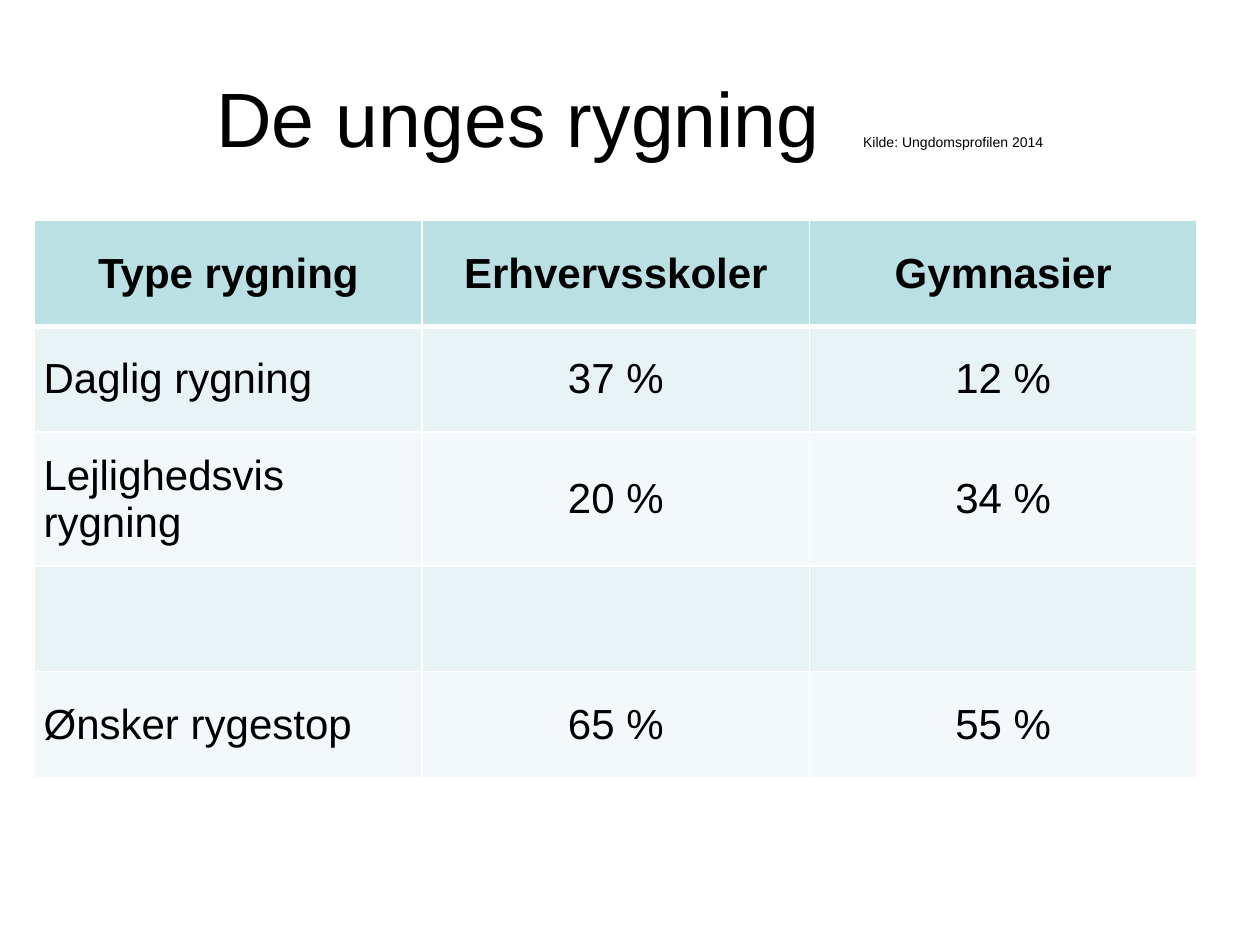
from lxml import etree
from pptx import Presentation
from pptx.dml.color import RGBColor
from pptx.enum.text import MSO_ANCHOR, PP_ALIGN
from pptx.oxml.ns import qn
from pptx.util import Cm, Pt

LEFT, MID = PP_ALIGN.LEFT, PP_ALIGN.CENTER
CENTRE = MSO_ANCHOR.MIDDLE


def tint(code):
    return RGBColor.from_string(code)


def write(para, text, size=24, bold=False, align=MID, color="000000"):
    para.alignment = align
    run = para.add_run()
    run.text = text
    font = run.font
    font.name = "Arial"
    font.size = Pt(size)
    font.bold = bold
    font.color.rgb = tint(color)


deck = Presentation()
deck.slide_width, deck.slide_height = Cm(25.4), Cm(19.05)
slide = deck.slides.add_slide(deck.slide_layouts[5])

title = slide.shapes.title
title.left, title.top = Cm(1.27), Cm(0.76)
title.width, title.height = Cm(22.86), Cm(3.18)
title.text_frame.vertical_anchor = CENTRE
head = title.text_frame.paragraphs[0]
write(head, "De unges rygning  ", size=44)
write(head, "Kilde: Ungdomsprofilen 2014", size=8)

rows = [
    ("Type rygning", "Erhvervsskoler", "Gymnasier"),
    ("Daglig rygning", "37 %", "12 %"),
    ("Lejlighedsvis rygning", "20 %", "34 %"),
    ("", "", ""),
    ("Ønsker rygestop", "65 %", "55 %"),
]
highs = [2.13, 2.13, 2.7, 2.13, 2.13]
fills = ["BBE0E3", "E7F3F4", "F3F9FA", "E7F3F4", "F3F9FA"]

frame = slide.shapes.add_table(
    len(rows), 3, Cm(0.7), Cm(4.45), Cm(23.43), Cm(sum(highs))
)
table = frame.table
for col in table.columns:
    col.width = Cm(7.81)

for r, row in enumerate(rows):
    table.rows[r].height = Cm(highs[r])
    for c, text in enumerate(row):
        cell = table.cell(r, c)
        cell.vertical_anchor = CENTRE
        cell.margin_left = cell.margin_right = Cm(0.18)
        cell.margin_top = cell.margin_bottom = 0
        props = cell._tc.get_or_add_tcPr()
        for side in ("L", "R", "T", "B"):
            thick = (r == 0 and side == "B") or (r == 1 and side == "T")
            line = etree.SubElement(props, qn("a:ln" + side))
            line.set("w", str(Pt(3 if thick else 1)))
            solid = etree.SubElement(line, qn("a:solidFill"))
            etree.SubElement(solid, qn("a:srgbClr")).set("val", "FFFFFF")
        cell.fill.solid()
        cell.fill.fore_color.rgb = tint(fills[r])
        if text:
            align = LEFT if r and c == 0 else MID
            write(cell.text_frame.paragraphs[0], text, bold=r == 0, align=align)

deck.save("out.pptx")
